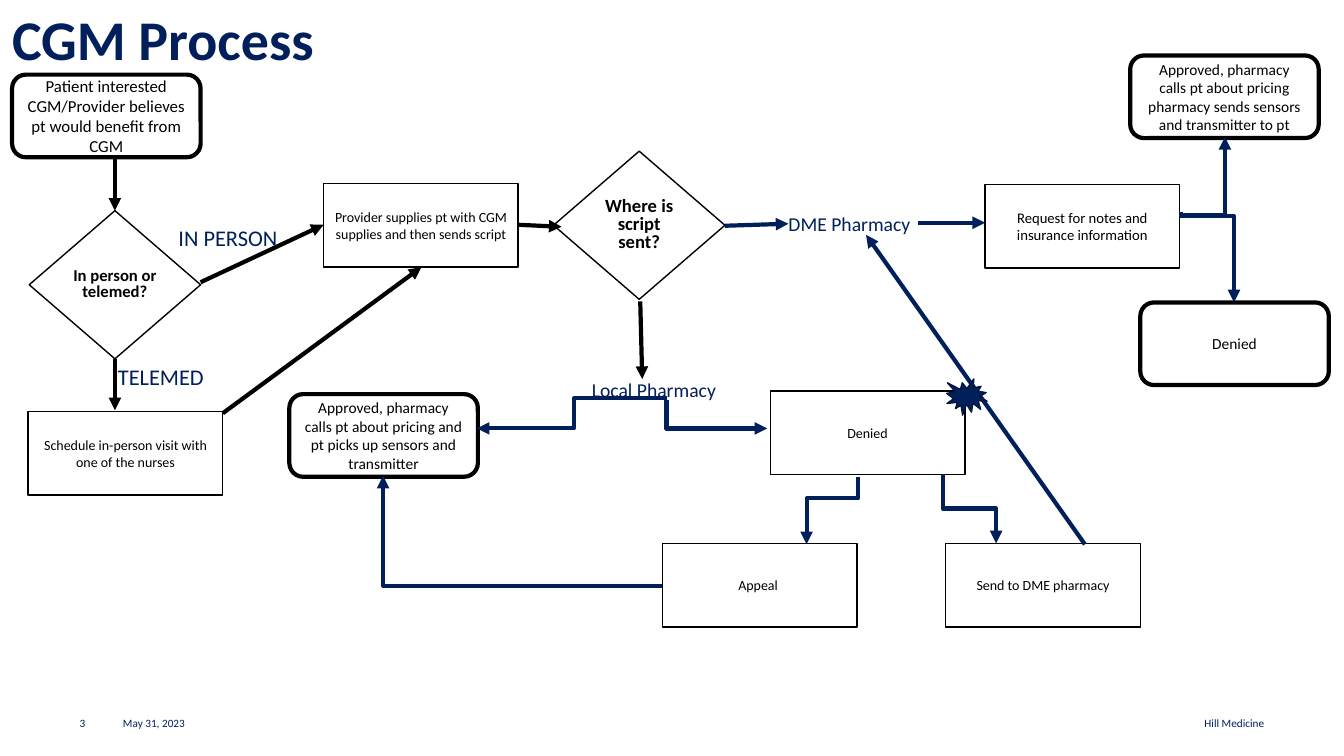
import pptx
import pptx.util
import pptx.dml.color
import pptx.enum.shapes
import pptx.enum.text
import pptx.oxml.ns
import lxml.etree

Inches = pptx.util.Inches
Pt = pptx.util.Pt
SHAPE = pptx.enum.shapes.MSO_SHAPE
CONNECTOR = pptx.enum.shapes.MSO_CONNECTOR
ALIGN = pptx.enum.text.PP_ALIGN
ANCHOR = pptx.enum.text.MSO_ANCHOR
qn = pptx.oxml.ns.qn

NAVY = pptx.dml.color.RGBColor(0x01, 0x1F, 0x5B)
DARK_NAVY = pptx.dml.color.RGBColor(0x01, 0x17, 0x43)
BLACK = pptx.dml.color.RGBColor(0, 0, 0)
WHITE = pptx.dml.color.RGBColor(255, 255, 255)

deck = pptx.Presentation()
deck.slide_width = Inches(13.33)
deck.slide_height = Inches(7.5)
slide = deck.slides.add_slide(deck.slide_layouts[6])


def write(holder, text, size, color=NAVY, bold=False, align=ALIGN.LEFT,
          anchor=ANCHOR.TOP, inset=True, spacing=1.0):
    frame = holder.text_frame
    frame.word_wrap = True
    frame.vertical_anchor = anchor
    if not inset:
        frame.margin_left = frame.margin_right = 0
        frame.margin_top = frame.margin_bottom = 0
    paragraph = frame.paragraphs[0]
    paragraph.alignment = align
    paragraph.line_spacing = spacing
    run = paragraph.add_run()
    run.text = text
    run.font.name = "Calibri"
    run.font.size = Pt(size)
    run.font.bold = bold
    run.font.color.rgb = color


def add_arrow(start, end, color=NAVY, bend=None, upright=False, adjust=0.5):
    (x1, y1), (x2, y2) = start, end
    if upright:
        middle_x, middle_y = (x1 + x2) / 2, (y1 + y2) / 2
        half_x, half_y = (x2 - x1) / 2, (y2 - y1) / 2
        x1, x2 = middle_x - half_y, middle_x + half_y
        y1, y2 = middle_y + half_x, middle_y - half_x
    kind = CONNECTOR.ELBOW if bend else CONNECTOR.STRAIGHT
    arrow = slide.shapes.add_connector(kind, Inches(x1), Inches(y1), Inches(x2), Inches(y2))
    arrow.line.color.rgb = color
    arrow.line.width = Pt(3)
    properties = arrow.element.spPr
    if upright:
        properties.find(qn("a:xfrm")).set("rot", "5400000")
    if bend:
        geometry = properties.find(qn("a:prstGeom"))
        geometry.set("prst", bend)
        if bend == "bentConnector3":
            lxml.etree.SubElement(geometry.find(qn("a:avLst")), qn("a:gd"),
                                  name="adj1", fmla=f"val {round(adjust * 100000)}")
    lxml.etree.SubElement(properties.find(qn("a:ln")), qn("a:tailEnd"), type="triangle")
    lxml.etree.SubElement(properties, qn("a:effectLst"))


labels = [
    ("CGM Process", 0.12, 0.12, 11.76, 0.61, 40, dict(bold=True, spacing=0.9)),
    ("3", 0.79, 7.04, 0.43, 0.2, 8, dict(anchor=ANCHOR.BOTTOM)),
    ("May 31, 2023", 1.22, 7.04, 3, 0.2, 8, dict(anchor=ANCHOR.BOTTOM)),
    ("Hill Medicine", 9.9, 7.04, 2.64, 0.2, 8, dict(anchor=ANCHOR.BOTTOM, align=ALIGN.RIGHT)),
    ("DME Pharmacy", 7.82, 2.1, 1.55, 0.24, 14, {}),
    ("Local Pharmacy", 5.87, 3.75, 1.55, 0.24, 14, {}),
    ("TELEMED", 1.17, 3.6, 1.16, 0.27, 16, {}),
    ("IN PERSON", 1.77, 2.22, 1.16, 0.27, 16, {}),
]
for text, left, top, width, height, size, style in labels:
    label = slide.shapes.add_textbox(Inches(left), Inches(top), Inches(width), Inches(height))
    write(label, text, size, inset=False, **style)

outcome = (SHAPE.ROUNDED_RECTANGLE, 1.87, 0.82, 3, {})
step = (SHAPE.RECTANGLE, 1.93, 0.83, 1, {})
decision = (SHAPE.DIAMOND, 1.7, 1.47, 1, dict(bold=True, inset=False, spacing=0.8))
nodes = [
    (outcome, 0.12, 0.74, 12, "Patient interested CGM/Provider believes pt would benefit from CGM"),
    (decision, 0.29, 2.09, 11.9, "In person or telemed?"),
    (step, 0.28, 4.08, 10, "Schedule in-person visit with one of the nurses"),
    (step, 3.21, 1.82, 10, "Provider supplies pt with CGM supplies and then sends script"),
    (decision, 5.49, 1.5, 13.3, "Where is script sent?"),
    (outcome, 2.87, 3.91, 11,
     "Approved, pharmacy calls pt about pricing and pt picks up sensors and transmitter"),
    (step, 7.64, 3.88, 10, "Denied"),
    (step, 6.57, 5.39, 10, "Appeal "),
    (step, 9.38, 5.39, 10, "Send to DME pharmacy"),
    (step, 9.77, 1.83, 10.5, "Request for notes and insurance information"),
    (outcome, 11.21, 0.55, 11,
     "Approved, pharmacy calls pt about pricing pharmacy sends sensors and transmitter to pt"),
    (outcome, 11.31, 3, 11, "Denied"),
]
for (outline, width, height, weight, style), left, top, size, text in nodes:
    node = slide.shapes.add_shape(outline, Inches(left), Inches(top), Inches(width), Inches(height))
    node.shadow.inherit = False
    node.fill.solid()
    node.fill.fore_color.rgb = WHITE
    node.line.color.rgb = BLACK
    node.line.width = Pt(weight)
    write(node, text, size, color=BLACK, align=ALIGN.CENTER, anchor=ANCHOR.MIDDLE, **style)

straight_arrows = [
    ((1.14, 1.58), (1.14, 2.09), BLACK),
    ((1.14, 3.56), (1.14, 4.07), BLACK),
    ((1.99, 2.8), (3.21, 2.23), BLACK),
    ((2.21, 4.1), (4.18, 2.65), BLACK),
    ((5.14, 2.23), (5.57, 2.25), BLACK),
    ((6.35, 2.99), (6.37, 3.76), BLACK),
    ((7.19, 2.24), (7.82, 2.22), NAVY),
    ((9.1, 2.21), (9.77, 2.21), NAVY),
    ((10.76, 5.4), (8.59, 2.33), NAVY),
]
for start, end, color in straight_arrows:
    add_arrow(start, end, color)

bent_arrows = [
    ((6.62, 3.95), (4.73, 4.25), "bentConnector3", False, 0.49),
    ((6.61, 3.97), (7.61, 4.25), "bentConnector2", True, None),
    ((8.51, 4.73), (8, 5.4), "bentConnector3", True, 0.32),
    ((6.57, 5.81), (3.8, 4.72), "bentConnector2", False, None),
    ((9.35, 4.7), (9.88, 5.39), "bentConnector3", True, 0.5),
    ((11.71, 2.1), (12.15, 1.36), "bentConnector3", True, -0.05),
    ((11.71, 2.1), (12.24, 3), "bentConnector3", True, 0.05),
]
for start, end, bend, upright, adjust in bent_arrows:
    add_arrow(start, end, bend=bend, upright=upright, adjust=adjust)

burst = slide.shapes.add_shape(SHAPE.EXPLOSION1, Inches(9.39), Inches(3.76), Inches(0.4), Inches(0.36))
burst.shadow.inherit = False
burst.fill.solid()
burst.fill.fore_color.rgb = NAVY
burst.line.color.rgb = DARK_NAVY
burst.line.width = Pt(1)

deck.save("out.pptx")
